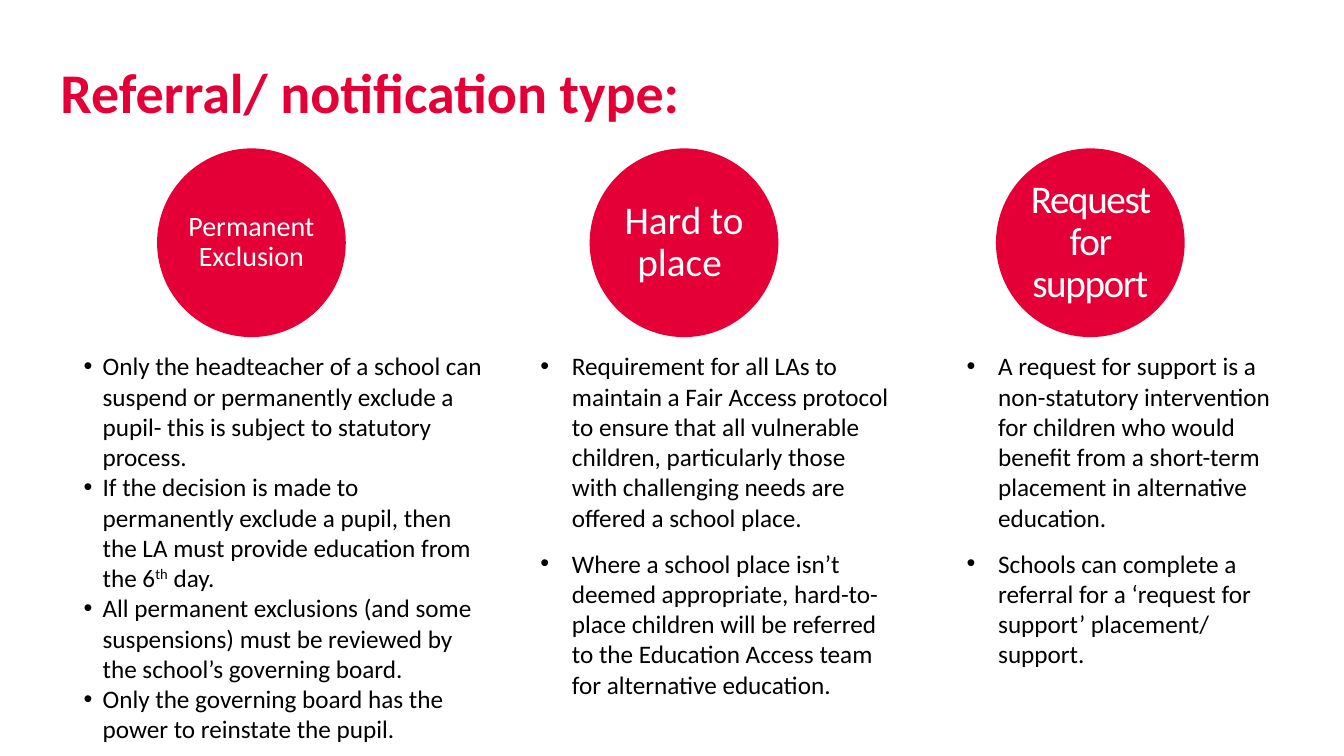
from dataclasses import dataclass

from lxml.etree import SubElement
from pptx import Presentation
from pptx.dml.color import RGBColor
from pptx.enum.shapes import MSO_SHAPE
from pptx.enum.text import MSO_ANCHOR, PP_ALIGN
from pptx.oxml.ns import qn
from pptx.util import Pt


@dataclass(frozen=True)
class Theme:
    font: str = "Calibri"
    accent: RGBColor = RGBColor(0xE4, 0x00, 0x37)
    body: RGBColor = RGBColor(0x00, 0x00, 0x00)
    inverse: RGBColor = RGBColor(0xFF, 0xFF, 0xFF)
    title_size: int = 40
    circle_size: int = 28
    small_circle_size: int = 20
    body_size: int = 18


class SlideBuilder:
    def __init__(self, slide, theme):
        self.slide = slide
        self.theme = theme

    def prepare_frame(self, shape):
        frame = shape.text_frame
        frame.word_wrap = True
        frame.margin_left = frame.margin_top = 0
        frame.margin_right = frame.margin_bottom = 0
        return frame

    def add_frame(self, left, top, width, height):
        box = self.slide.shapes.add_textbox(Pt(left), Pt(top), Pt(width), Pt(height))
        return self.prepare_frame(box)

    def style(self, paragraph, size, color, bold=False):
        font = paragraph.font
        font.name = self.theme.font
        font.size = Pt(size)
        font.bold = bold
        font.color.rgb = color

    def title(self, text, left, top, width, height):
        paragraph = self.add_frame(left, top, width, height).paragraphs[0]
        paragraph.text = text
        self.style(paragraph, self.theme.title_size, self.theme.accent, bold=True)

    def circle(self, text, left, top, diameter, size, tracking=0):
        shape = self.slide.shapes.add_shape(
            MSO_SHAPE.OVAL, Pt(left), Pt(top), Pt(diameter), Pt(diameter))
        shape.shadow.inherit = False
        shape.fill.solid()
        shape.fill.fore_color.rgb = self.theme.accent
        shape.line.fill.background()
        frame = self.prepare_frame(shape)
        frame.vertical_anchor = MSO_ANCHOR.MIDDLE
        paragraph = frame.paragraphs[0]
        paragraph.alignment = PP_ALIGN.CENTER
        paragraph.line_spacing = 0.9
        run = paragraph.add_run()
        run.text = text
        if tracking:
            run._r.get_or_add_rPr().set("spc", str(tracking * 100))
        self.style(paragraph, size, self.theme.inverse)

    def bullets(self, items, left, top, width, height, indent, space_after):
        frame = self.add_frame(left, top, width, height)
        for index, item in enumerate(items):
            paragraph = frame.add_paragraph() if index else frame.paragraphs[0]
            properties = paragraph._p.get_or_add_pPr()
            properties.set("marL", str(Pt(indent)))
            properties.set("indent", str(-Pt(indent)))
            SubElement(properties, qn("a:buFont"), typeface="Arial")
            SubElement(properties, qn("a:buChar"), char="•")
            paragraph.space_after = Pt(space_after)
            for position, text in enumerate(item.split("^")):
                run = paragraph.add_run()
                run.text = text
                if position % 2:
                    run._r.get_or_add_rPr().set("baseline", "30000")
            self.style(paragraph, self.theme.body_size, self.theme.body)


def main():
    presentation = Presentation()
    presentation.slide_width = Pt(960)
    presentation.slide_height = Pt(540)
    slide = presentation.slides.add_slide(presentation.slide_layouts[6])
    theme = Theme()
    builder = SlideBuilder(slide, theme)
    builder.title("Referral/ notification type:", 43.2, 41, 583, 55.5)

    circle_top, circle_diameter, bullets_top = 106, 134.8, 250.5
    referral_types = [
        dict(
            circle=dict(text="Permanent Exclusion", left=112.2,
                        size=theme.small_circle_size),
            bullets=dict(left=59.8, width=287.3, height=278.6, indent=13.5,
                         space_after=0, items=[
                "Only the headteacher of a school can suspend or permanently exclude "
                "a pupil- this is subject to statutory process.",
                "If the decision is made to permanently exclude a pupil, then the LA "
                "must provide education from the 6^th^ day.",
                "All permanent exclusions (and some suspensions) must be reviewed by "
                "the school’s governing board.",
                "Only the governing board has the power to reinstate the pupil.",
            ]),
        ),
        dict(
            circle=dict(text="Hard to place ", left=421.2, size=theme.circle_size),
            bullets=dict(left=386, width=253.4, height=278.6, indent=22.5,
                         space_after=11.3, items=[
                "Requirement for all LAs to maintain a Fair Access protocol to ensure "
                "that all vulnerable children, particularly those with challenging "
                "needs are offered a school place.",
                "Where a school place isn’t deemed appropriate, hard-to-place children "
                "will be referred to the Education Access team for alternative "
                "education.",
            ]),
        ),
        dict(
            circle=dict(text="Request for support", left=711.4,
                        size=theme.circle_size, tracking=-1),
            bullets=dict(left=690.5, width=218.2, height=299.5, indent=22.5,
                         space_after=11.3, items=[
                "A request for support is a non-statutory intervention for children "
                "who would benefit from a short-term placement in alternative "
                "education.",
                "Schools can complete a referral for a ‘request for support’ "
                "placement/ support.",
            ]),
        ),
    ]
    for referral_type in referral_types:
        builder.circle(top=circle_top, diameter=circle_diameter,
                       **referral_type["circle"])
        builder.bullets(top=bullets_top, **referral_type["bullets"])

    presentation.save("out.pptx")


if __name__ == "__main__":
    main()
